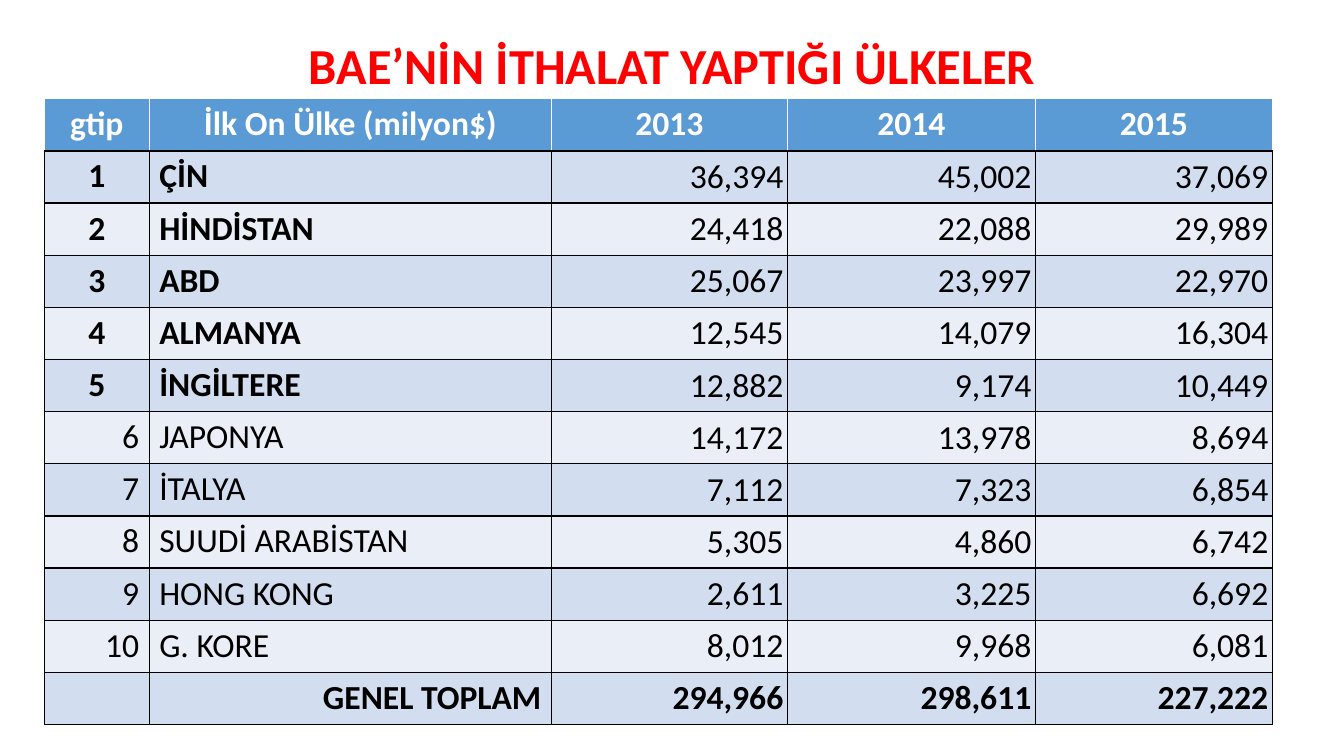
"""Build a slide listing the countries the UAE imports from."""
import lxml.etree
import pptx
import pptx.dml.color
import pptx.enum.text
import pptx.oxml.ns
import pptx.util

Inches = pptx.util.Inches
Pt = pptx.util.Pt
RGBColor = pptx.dml.color.RGBColor
Align = pptx.enum.text.PP_ALIGN
Anchor = pptx.enum.text.MSO_ANCHOR

RED = RGBColor(0xFF, 0x00, 0x00)
WHITE = RGBColor(0xFF, 0xFF, 0xFF)
BLACK = RGBColor(0x00, 0x00, 0x00)
HEADER_BLUE = RGBColor(0x5B, 0x9B, 0xD5)
BANDS = (RGBColor(0xEA, 0xEF, 0xF7), RGBColor(0xD2, 0xDE, 0xEF))

FONT = "Calibri"
COLUMN_WIDTHS = (1.04, 3.99, 2.34, 2.46, 2.35)
TABLE_HEIGHT = 6.21
BOLD_COUNTRIES = 5
ROWS = (
    ("gtip", "İlk On Ülke (milyon$)", "2013", "2014", "2015"),
    ("1", "ÇİN", "36,394", "45,002", "37,069"),
    ("2", "HİNDİSTAN", "24,418", "22,088", "29,989"),
    ("3", "ABD", "25,067", "23,997", "22,970"),
    ("4", "ALMANYA", "12,545", "14,079", "16,304"),
    ("5", "İNGİLTERE", "12,882", "9,174", "10,449"),
    ("6", "JAPONYA", "14,172", "13,978", "8,694"),
    ("7", "İTALYA", "7,112", "7,323", "6,854"),
    ("8", "SUUDİ ARABİSTAN", "5,305", "4,860", "6,742"),
    ("9", "HONG KONG", "2,611", "3,225", "6,692"),
    ("10", "G. KORE", "8,012", "9,968", "6,081"),
    ("", "GENEL TOPLAM", "294,966", "298,611", "227,222"),
)
TOTAL_ROW = len(ROWS) - 1


def format_paragraph(para, size, color, bold, align):
    """Set the font and alignment of a paragraph."""
    para.alignment = align
    para.font.name = FONT
    para.font.size = Pt(size)
    para.font.bold = bold
    para.font.color.rgb = color


def add_title(slide, text):
    """Fill and place the title placeholder."""
    title = slide.shapes.title
    title.left, title.top = Inches(0.92), Inches(0.4)
    title.width, title.height = Inches(11.5), Inches(0.55)
    frame = title.text_frame
    frame.text = text
    frame.word_wrap = True
    frame.auto_size = pptx.enum.text.MSO_AUTO_SIZE.NONE
    frame.vertical_anchor = Anchor.MIDDLE
    para = frame.paragraphs[0]
    para.line_spacing = 0.9
    format_paragraph(para, 36, RED, True, Align.CENTER)


def set_borders(cell, side_color, bottom_color):
    """Draw one-point borders around a cell."""
    qn = pptx.oxml.ns.qn
    properties = cell._tc.get_or_add_tcPr()
    colors = (side_color, side_color, side_color, bottom_color)
    for index, (side, color) in enumerate(zip("LRTB", colors)):
        line = lxml.etree.Element(qn(f"a:ln{side}"), w=str(Pt(1)))
        fill = lxml.etree.SubElement(line, qn("a:solidFill"))
        lxml.etree.SubElement(fill, qn("a:srgbClr"), val=str(color))
        properties.insert(index, line)


def choose_alignment(row, column):
    """Return the alignment for a table position."""
    if row == 0 or (column == 0 and row <= BOLD_COUNTRIES):
        return Align.CENTER
    if column == 1 and row != TOTAL_ROW:
        return Align.LEFT
    return Align.RIGHT


def fill_cell(cell, text, row, column):
    """Write and style one table cell."""
    is_header = row == 0
    bold = is_header or row == TOTAL_ROW or (row <= BOLD_COUNTRIES and column < 2)
    cell.text = text
    cell.fill.solid()
    cell.fill.fore_color.rgb = HEADER_BLUE if is_header else BANDS[row % 2]
    if not is_header and column >= 2:
        cell.vertical_anchor = Anchor.MIDDLE
        cell.margin_left = cell.margin_right = Inches(0.04)
        cell.margin_top = cell.margin_bottom = Inches(0.04)
    color = WHITE if is_header else BLACK
    format_paragraph(cell.text_frame.paragraphs[0], 24, color, bold,
                     choose_alignment(row, column))
    set_borders(cell, color, BLACK)


def add_import_table(slide):
    """Add the table of imports by country and year."""
    table = slide.shapes.add_table(
        len(ROWS), len(COLUMN_WIDTHS), Inches(0.44), Inches(0.98),
        Inches(sum(COLUMN_WIDTHS)), Inches(TABLE_HEIGHT)).table
    for column, width in zip(table.columns, COLUMN_WIDTHS):
        column.width = Inches(width)
    for row, values in enumerate(ROWS):
        for column, text in enumerate(values):
            fill_cell(table.cell(row, column), text, row, column)


def main():
    """Build and save the deck."""
    deck = pptx.Presentation()
    deck.slide_width, deck.slide_height = Inches(13.33), Inches(7.5)
    slide = deck.slides.add_slide(deck.slide_layouts.get_by_name("Title Only"))
    add_title(slide, "BAE’NİN İTHALAT YAPTIĞI ÜLKELER")
    add_import_table(slide)
    deck.save("out.pptx")


if __name__ == "__main__":
    main()
